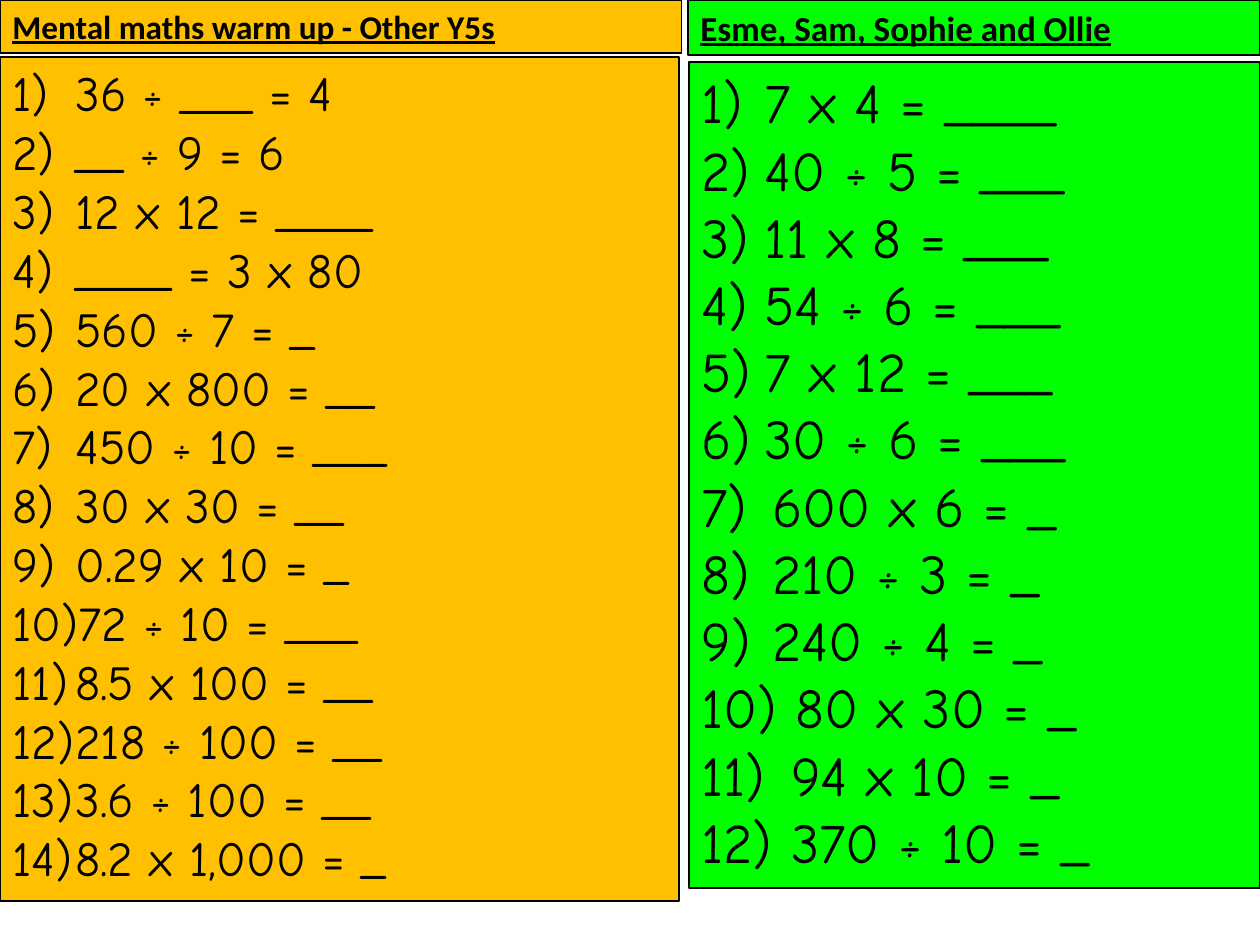
from lxml import etree
from pptx import Presentation
from pptx.dml.color import RGBColor
from pptx.enum.shapes import MSO_SHAPE
from pptx.enum.text import MSO_ANCHOR, MSO_AUTO_SIZE, PP_ALIGN
from pptx.oxml.ns import qn
from pptx.util import Pt

RECT = MSO_SHAPE.RECTANGLE
TOP = MSO_ANCHOR.TOP
GROW = MSO_AUTO_SIZE.SHAPE_TO_FIT_TEXT
LEFT = PP_ALIGN.LEFT

BLACK = RGBColor(0, 0, 0)
AMBER = RGBColor(0xFF, 0xC0, 0x00)
GREEN = RGBColor(0x00, 0xFF, 0x00)

# Each numbered list: (first number, hanging indent in points, questions)
MAIN_LISTS = [
    (1, 36, ["36 ÷ ___ = 4", "__ ÷ 9 = 6", "12 x 12 = ____", "____ = 3 x 80",
             "560 ÷ 7 = _", "20 x 800 = __", "450 ÷ 10 = ___", "30 x 30 = __",
             "0.29 x 10 = _", "72 ÷ 10 = ___", "8.5 x 100 = __",
             "218 ÷ 100 = __", "3.6 ÷ 100 = __", "8.2 x 1,000 = _"]),
]
GROUP_LISTS = [
    (1, 36, ["7 x 4 = ____", "40 ÷ 5 = ___", "11 x 8 = ___", "54 ÷ 6 = ___",
             "7 x 12 = ___", "30 ÷ 6 = ___"]),
    (7, 40.5, ["600 x 6 = _", "210 ÷ 3 = _", "240 ÷ 4 = _", " 80 x 30 = _",
               " 94 x 10 = _", " 370 ÷ 10 = _"]),
]


def add_panel(slide, box, color):
    """Outlined rectangle with top-left text; returns its text frame."""
    s = slide.shapes.add_shape(RECT, *(Pt(v) for v in box))
    s.shadow.inherit = False
    s.fill.solid()
    s.fill.fore_color.rgb = color
    s.line.color.rgb = BLACK
    s.line.width = Pt(1)
    tf = s.text_frame
    for name, value in {"word_wrap": True, "vertical_anchor": TOP,
                        "auto_size": GROW}.items():
        setattr(tf, name, value)
    return tf


def write(p, text, **font):
    p.alignment = LEFT
    r = p.add_run()
    r.text = text
    r.font.color.rgb = BLACK
    for name, value in font.items():
        setattr(r.font, name, value)


def number(p, start, indent):
    """Automatic numbering with a hanging indent."""
    pPr = p._p.get_or_add_pPr()
    pPr.set("marL", str(Pt(indent)))
    pPr.set("indent", str(-Pt(indent)))
    bullet = etree.SubElement(pPr, qn("a:buAutoNum"), type="arabicParenR")
    if start > 1:
        bullet.set("startAt", str(start))


def add_heading(slide, box, color, text, size):
    tf = add_panel(slide, box, color)
    write(tf.paragraphs[0], text, name="Calibri", size=Pt(size),
          bold=True, underline=True)


def add_questions(slide, box, color, lists, size):
    tf = add_panel(slide, box, color)
    p = tf.paragraphs[0]
    for start, indent, questions in lists:
        for question in questions:
            if p.runs:
                p = tf.add_paragraph()
            write(p, question, name="Comic Neue", size=Pt(size))
            number(p, start, indent)


def main():
    prs = Presentation()
    prs.slide_width, prs.slide_height = Pt(720), Pt(540)
    slide = prs.slides.add_slide(prs.slide_layouts[6])

    # Headings
    add_heading(slide, (0, 0, 389.5, 30.2), AMBER,
                "Mental maths warm up - Other Y5s", 19)
    add_heading(slide, (393.1, 0, 326.9, 31.5), GREEN,
                "Esme, Sam, Sophie and Ollie", 20)

    # Question lists
    add_questions(slide, (0, 32.4, 388, 482.4), AMBER, MAIN_LISTS, 28)
    add_questions(slide, (393.8, 35.3, 326.2, 472.3), GREEN, GROUP_LISTS, 32)

    prs.save("out.pptx")


if __name__ == "__main__":
    main()
